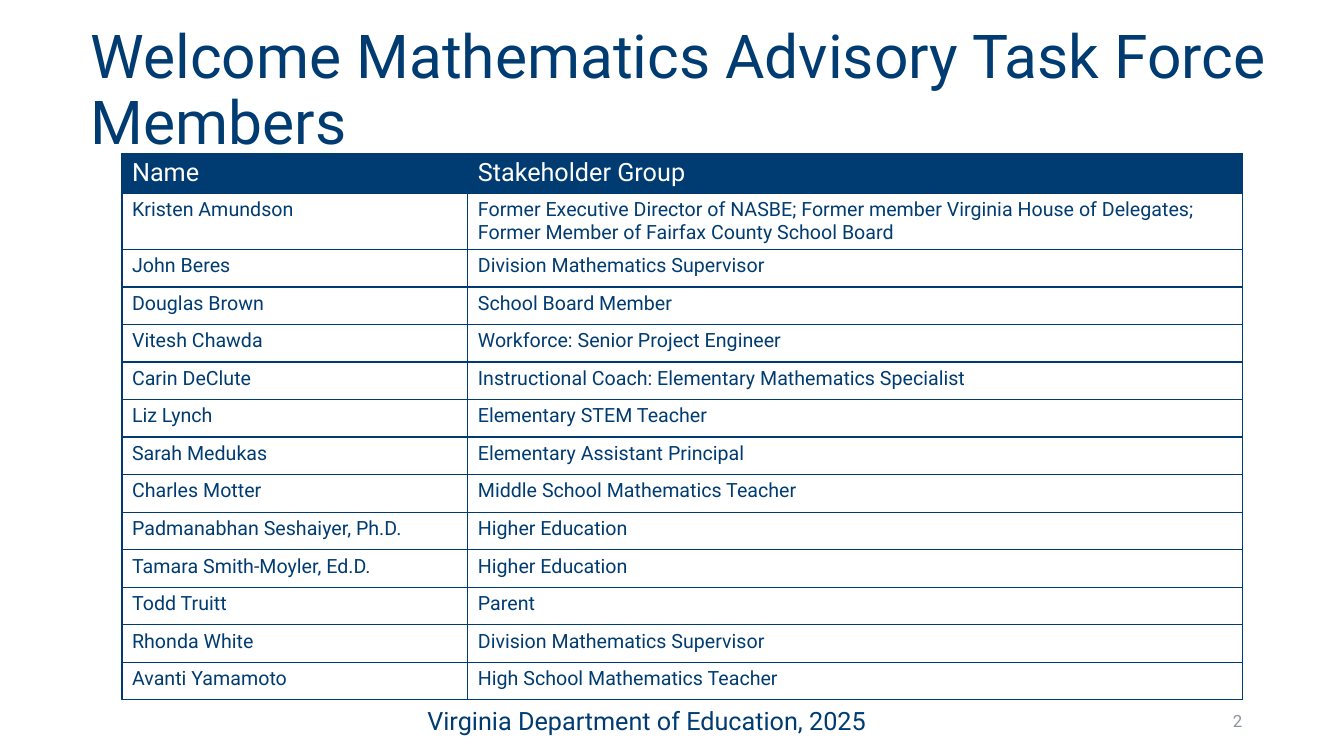
from dataclasses import dataclass

from lxml import etree
from pptx import Presentation
from pptx.dml.color import RGBColor
from pptx.enum.text import MSO_ANCHOR, MSO_AUTO_SIZE, PP_ALIGN
from pptx.oxml.ns import qn
from pptx.util import Inches, Pt

LEFT, RIGHT = PP_ALIGN.LEFT, PP_ALIGN.RIGHT
TOP, MIDDLE, BOTTOM = MSO_ANCHOR.TOP, MSO_ANCHOR.MIDDLE, MSO_ANCHOR.BOTTOM
NO_AUTOFIT = MSO_AUTO_SIZE.NONE
TITLE_ONLY = 5


@dataclass(frozen=True)
class Theme:
    font: str = "Roboto"
    navy: str = "003C71"
    white: str = "FFFFFF"
    gray: str = "8C92A5"
    title: float = 43.2
    heading: float = 18
    body: float = 14
    small: float = 12
    border: float = 1


THEME = Theme()

HEADINGS = ("Name", "Stakeholder Group")
MEMBERS = [
    ("Kristen Amundson",
     "Former Executive Director of NASBE; Former member Virginia House of "
     "Delegates; Former Member of Fairfax County School Board"),
    ("John Beres", "Division Mathematics Supervisor"),
    ("Douglas Brown", "School Board Member"),
    ("Vitesh Chawda", "Workforce: Senior Project Engineer"),
    ("Carin DeClute", "Instructional Coach: Elementary Mathematics Specialist"),
    ("Liz Lynch", "Elementary STEM Teacher"),
    ("Sarah Medukas", "Elementary Assistant Principal"),
    ("Charles Motter", "Middle School Mathematics Teacher"),
    ("Padmanabhan Seshaiyer, Ph.D.", "Higher Education"),
    ("Tamara Smith-Moyler, Ed.D.", "Higher Education"),
    ("Todd Truitt", "Parent"),
    ("Rhonda White", "Division Mathematics Supervisor"),
    ("Avanti Yamamoto", "High School Mathematics Teacher"),
]


def write(tf, text, size, color, align=LEFT):
    p = tf.paragraphs[0]
    p.alignment = align
    r = p.add_run()
    r.text = text
    r.font.name = THEME.font
    r.font.size = Pt(size)
    r.font.color.rgb = RGBColor.from_string(color)
    return p


def add_title(slide, box, text):
    sp = slide.shapes.title
    sp.left, sp.top, sp.width, sp.height = map(Inches, box)
    tf = sp.text_frame
    frame_format = {
        "word_wrap": True,
        "auto_size": NO_AUTOFIT,
        "vertical_anchor": BOTTOM,
        "margin_left": Inches(0.9),
        "margin_right": Inches(0.1),
        "margin_top": Inches(0.05),
        "margin_bottom": Inches(0.05),
    }
    for name, value in frame_format.items():
        setattr(tf, name, value)
    write(tf, text, THEME.title, THEME.navy).line_spacing = 0.9


def add_label(slide, box, text, size, color, align=LEFT, anchor=TOP):
    tf = slide.shapes.add_textbox(*map(Inches, box)).text_frame
    tf.word_wrap = True
    tf.vertical_anchor = anchor
    write(tf, text, size, color, align)


def set_borders(cell):
    """Draw all four edges; they must come before the fill in tcPr."""
    tc_pr = cell._tc.get_or_add_tcPr()
    for i, side in enumerate(("lnL", "lnR", "lnT", "lnB")):
        ln = etree.Element(qn(f"a:{side}"), w=str(Pt(THEME.border)))
        fill = etree.SubElement(ln, qn("a:solidFill"))
        etree.SubElement(fill, qn("a:srgbClr"), val=THEME.navy)
        tc_pr.insert(i, ln)


def add_member_table(slide, box, name_width=3.43, header_height=0.39, tall_height=0.56):
    """The first member's entry takes two lines; the other rows share the rest."""
    left, top, width, height = box
    rows = [HEADINGS, *MEMBERS]
    table = slide.shapes.add_table(len(rows), len(HEADINGS), *map(Inches, box)).table
    for column, w in zip(table.columns, (name_width, width - name_width)):
        column.width = Inches(w)

    row_height = (height - header_height - tall_height) / (len(rows) - 2)
    heights = [header_height, tall_height] + [row_height] * (len(rows) - 2)
    for i, (row, texts) in enumerate(zip(table.rows, rows)):
        row.height = Inches(heights[i])
        is_header = i == 0
        size = THEME.heading if is_header else THEME.body
        color, fill = (THEME.white, THEME.navy) if is_header else (THEME.navy, THEME.white)
        for cell, text in zip(row.cells, texts):
            write(cell.text_frame, text, size, color)
            cell.fill.solid()
            cell.fill.fore_color.rgb = RGBColor.from_string(fill)
            set_borders(cell)


def add_footer(slide, box):
    left, top, width, height = box
    number_width = 3
    add_label(slide, (left, top, 6.67, height), "Virginia Department of Education, 2025",
              THEME.heading, THEME.navy)
    add_label(slide, (left + width - number_width, top, number_width, height), "2",
              THEME.small, THEME.gray, RIGHT, MIDDLE)


def main():
    prs = Presentation()
    prs.slide_width, prs.slide_height = Inches(13.33), Inches(7.5)
    slide = prs.slides.add_slide(prs.slide_layouts[TITLE_ONLY])
    add_title(slide, (0, 0.16, 13.33, 1.45), "Welcome Mathematics Advisory Task Force Members")
    add_member_table(slide, (1.21, 1.52, 11.11, 5.42))
    add_footer(slide, (4.14, 6.95, 8.28, 0.4))
    prs.save("out.pptx")


if __name__ == "__main__":
    main()
